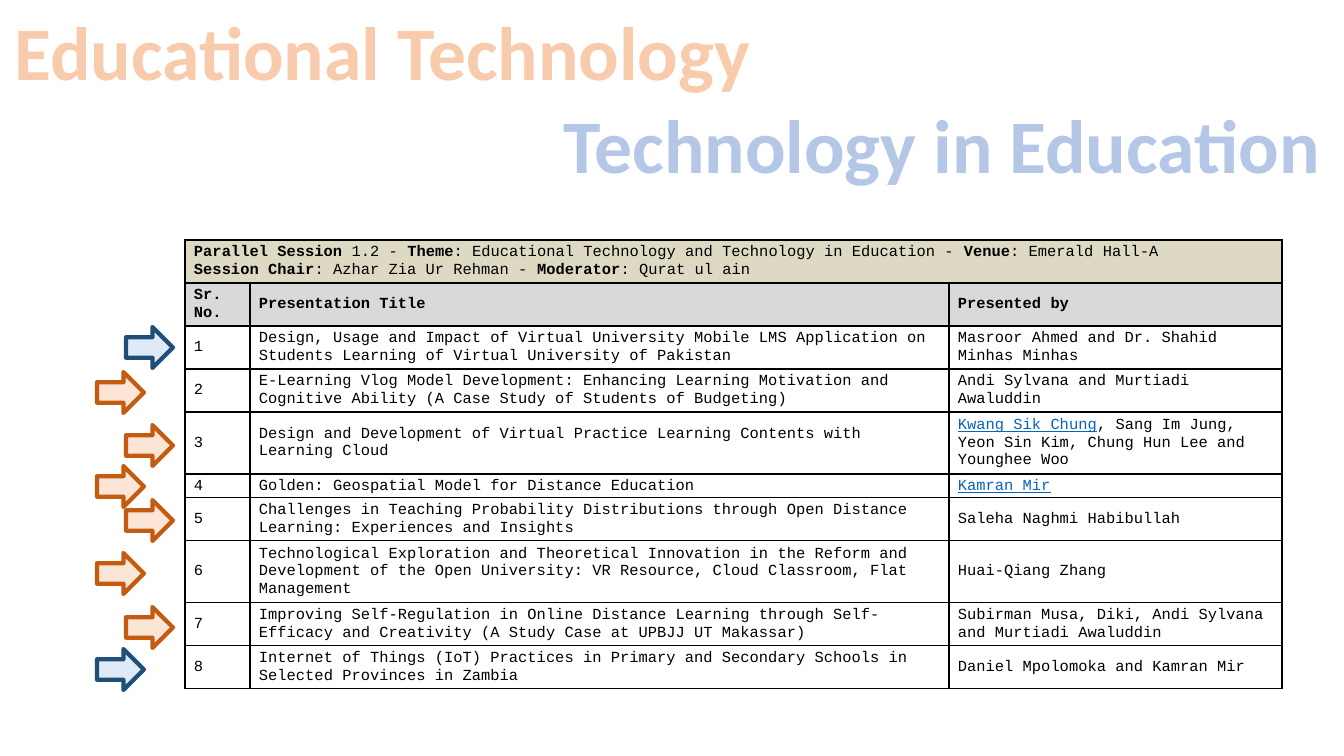
from lxml import etree
from pptx import Presentation, util as u
from pptx.dml.color import RGBColor
from pptx.enum import shapes, text
from pptx.oxml import ns

# Content
COLORS = {
    "black": "000000", "link": "0563C1", "session": "DDD9C3", "header": "D9D9D9",
    "peach": "F8CBAD", "orange": "ED7D31", "sky": "B4C7E7", "navy": "2F5597",
    "orange fill": "FBE5D6", "orange line": "C55A11",
    "blue fill": "DEEBF7", "blue line": "1F4E79",
}
TITLES = [  # text, box in px, fill, outline
    ("Educational Technology", (0, 0, 765, 102), "peach", "orange"),
    ("Technology in Education", (540, 93, 804, 102), "sky", "navy"),
]
SESSION = [  # lines of (text, style)
    [("Parallel Session", "bold"), (" 1.2 - ", ""), ("Theme", "bold"),
     (": Educational Technology and Technology in Education - ", ""),
     ("Venue", "bold"), (": Emerald Hall-A", "")],
    [("Session Chair", "bold"), (": Azhar Zia Ur Rehman - ", ""),
     ("Moderator", "bold"), (": Qurat ul ain", "")],
]
HEADERS = ["Sr. No.", "Presentation Title", "Presented by"]
TALKS = [  # title, linked presenter, other presenters
    ("Design, Usage and Impact of Virtual University Mobile LMS Application on "
     "Students Learning of Virtual University of Pakistan",
     "", "Masroor Ahmed and Dr. Shahid Minhas Minhas"),
    ("E-Learning Vlog Model Development: Enhancing Learning Motivation and "
     "Cognitive Ability (A Case Study of Students of Budgeting)",
     "", "Andi Sylvana and Murtiadi Awaluddin"),
    ("Design and Development of Virtual Practice Learning Contents with Learning Cloud",
     "Kwang Sik Chung", ", Sang Im Jung, Yeon Sin Kim, Chung Hun Lee and Younghee Woo"),
    ("Golden: Geospatial Model for Distance Education", "Kamran Mir", ""),
    ("Challenges in Teaching Probability Distributions through Open Distance "
     "Learning: Experiences and Insights", "", "Saleha Naghmi Habibullah"),
    ("Technological Exploration and Theoretical Innovation in the Reform and "
     "Development of the Open University: VR Resource, Cloud Classroom, Flat Management",
     "", "Huai-Qiang Zhang"),
    ("Improving Self-Regulation in Online Distance Learning through Self-Efficacy "
     "and Creativity (A Study Case at UPBJJ UT Makassar)",
     "", "Subirman Musa, Diki, Andi Sylvana and Murtiadi Awaluddin"),
    ("Internet of Things (IoT) Practices in Primary and Secondary Schools in "
     "Selected Provinces in Zambia", "", "Daniel Mpolomoka and Kamran Mir"),
]
TABLE_LEFT, TABLE_TOP = 185, 240
COLUMN_WIDTHS = [65, 699, 333]
ROW_HEIGHTS = [43, 43, 43, 43, 62, 24, 43, 62, 43, 43]
ARROW_LEFTS = [126, 97]  # odd talks, even talks
ARROW_TOPS = [327, 372, 425, 466, 500, 553, 607, 649]
ARROW_SIZE = (47, 41)
BLUE_TALKS = (1, 8)


def px(value):
    return u.Emu(round(value * 914400 / 100.8))


def rgb(name):
    return RGBColor.from_string(COLORS[name])


def add_line(parent, tag, width, color):
    line = etree.SubElement(parent, ns.qn(tag), w=str(u.Pt(width)))
    fill = etree.SubElement(line, ns.qn("a:solidFill"))
    etree.SubElement(fill, ns.qn("a:srgbClr"), val=COLORS[color])
    return line


def fill_cell(cell, lines, fill=None):
    cell.margin_left = cell.margin_right = px(9)
    cell.margin_top = cell.margin_bottom = 0
    cell.vertical_anchor = text.MSO_ANCHOR.MIDDLE
    for index, spans in enumerate(lines):
        frame = cell.text_frame
        para = frame.add_paragraph() if index else frame.paragraphs[0]
        para.font.name, para.font.size = "Courier New", u.Pt(11)
        for words, style in spans:
            span = para.add_run()
            span.text = words
            span.font.name, span.font.size = "Courier New", u.Pt(11)
            span.font.bold = style == "bold"
            span.font.underline = style == "link"
            span.font.color.rgb = rgb("link" if style == "link" else "black")
    # Borders come before the fill
    properties = cell._tc.get_or_add_tcPr()
    for side in "LRTB":
        add_line(properties, f"a:ln{side}", 1, "black")
    if fill:
        cell.fill.solid()
        cell.fill.fore_color.rgb = rgb(fill)
    else:
        cell.fill.background()


deck = Presentation()
deck.slide_width, deck.slide_height = px(1344), px(756)
page = deck.slides.add_slide(deck.slide_layouts[6])

# Titles
for words, place, fill, outline in TITLES:
    box = page.shapes.add_textbox(*map(px, place))
    box.text_frame.word_wrap = False
    box.text_frame.auto_size = text.MSO_AUTO_SIZE.SHAPE_TO_FIT_TEXT
    para = box.text_frame.paragraphs[0]
    para.alignment = text.PP_ALIGN.CENTER
    span = para.add_run()
    span.text = words
    span.font.name, span.font.size, span.font.bold = "Calibri", u.Pt(54), True
    span.font.color.rgb = rgb(fill)
    run_properties = span._r.get_or_add_rPr()
    run_properties.insert(0, add_line(run_properties, "a:ln", 1.75, outline))

# Session table
table = page.shapes.add_table(
    len(ROW_HEIGHTS), len(COLUMN_WIDTHS), px(TABLE_LEFT), px(TABLE_TOP),
    px(sum(COLUMN_WIDTHS)), px(sum(ROW_HEIGHTS))).table
table.first_row = table.horz_banding = False
for column, width in zip(table.columns, COLUMN_WIDTHS):
    column.width = px(width)
for row, height in zip(table.rows, ROW_HEIGHTS):
    row.height = px(height)

table.cell(0, 0).merge(table.cell(0, 2))
for column, header in enumerate(HEADERS):
    fill_cell(table.cell(0, column), [] if column else SESSION, "session")
    fill_cell(table.cell(1, column), [[(header, "bold")]], "header")
for number, (title, linked, others) in enumerate(TALKS, 1):
    presenters = [(words, style) for words, style in ((linked, "link"), (others, "")) if words]
    for column, spans in enumerate([[(str(number), "")], [(title, "")], presenters]):
        fill_cell(table.cell(number + 1, column), [spans])

# Arrows, the last talk at the back
for number in range(len(TALKS), 0, -1):
    arrow = page.shapes.add_shape(
        shapes.MSO_SHAPE.RIGHT_ARROW, px(ARROW_LEFTS[(number - 1) % 2]),
        px(ARROW_TOPS[number - 1]), *map(px, ARROW_SIZE))
    tone = "blue" if number in BLUE_TALKS else "orange"
    arrow.shadow.inherit = False
    arrow.fill.solid()
    arrow.fill.fore_color.rgb = rgb(f"{tone} fill")
    arrow.line.color.rgb = rgb(f"{tone} line")
    arrow.line.width = u.Pt(3)

deck.save("out.pptx")
